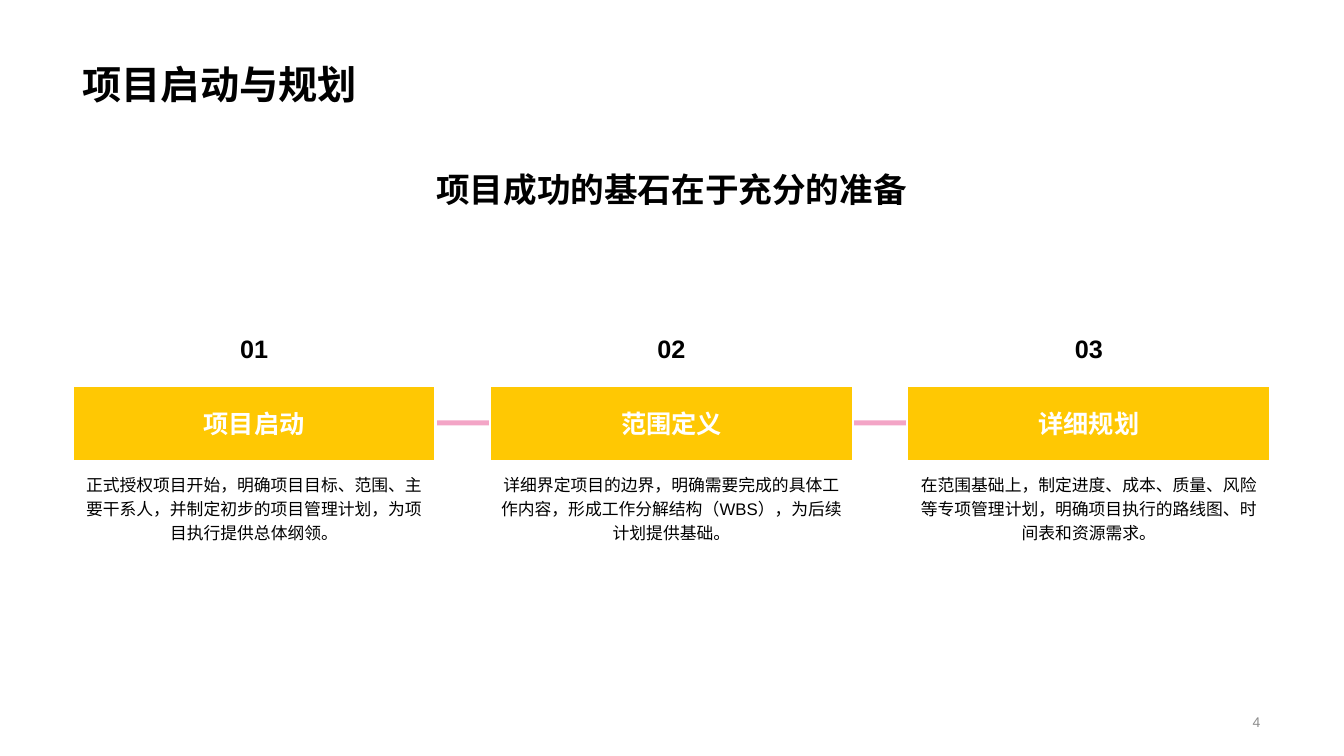
from pptx import Presentation
from pptx.dml.color import RGBColor
from pptx.enum.shapes import MSO_SHAPE as Shape
from pptx.enum.text import MSO_ANCHOR as Anchor, MSO_AUTO_SIZE as AutoSize, PP_ALIGN as Align
from pptx.oxml import parse_xml
from pptx.oxml.ns import nsdecls
from pptx.util import Inches, Pt

LEFT, WIDTH = 0.72, 11.88
STEP_WIDTH = 3.6
PITCH = (WIDTH - STEP_WIDTH) / 2
BAND_TOP, BAND_HEIGHT = 3.83, 0.74

STEPS = [
    ("项目启动", "正式授权项目开始，明确项目目标、范围、主要干系人，并制定初步的项目管理计划，为项目执行提供总体纲领。"),
    ("范围定义", "详细界定项目的边界，明确需要完成的具体工作内容，形成工作分解结构（WBS），为后续计划提供基础。"),
    ("详细规划", "在范围基础上，制定进度、成本、质量、风险等专项管理计划，明确项目执行的路线图、时间表和资源需求。"),
]


def color(value):
    return RGBColor.from_string(value)


def write(box, text, size, hue="000000", bold=False, align=Align.CENTER,
          anchor=Anchor.MIDDLE, spacing=1.0):
    frame = box.text_frame
    frame.text = text
    frame.word_wrap = True
    frame.auto_size = AutoSize.NONE
    frame.vertical_anchor = anchor
    para = frame.paragraphs[0]
    para.alignment = align
    para.line_spacing = spacing
    span = para.runs[0]
    font = span.font
    font.name, font.size, font.bold = "Arial", Pt(size), bold
    font.color.rgb = color(hue)
    # Chinese glyphs take the East Asian typeface
    font._element.find("{*}latin").addnext(
        parse_xml(f'<a:ea {nsdecls("a")} typeface="Noto Sans CJK SC"/>'))


deck = Presentation()
deck.slide_width, deck.slide_height = Inches(13.33), Inches(7.5)
page = deck.slides.add_slide(deck.slide_layouts[5])
shapes = page.shapes

# Title
title = shapes.title
title.left, title.top = Inches(LEFT), Inches(0.14)
title.width, title.height = Inches(WIDTH), Inches(0.98)
write(title, "项目启动与规划", 28, bold=True, align=Align.LEFT, anchor=Anchor.BOTTOM)

# Headline
headline = shapes.add_textbox(Inches(LEFT), Inches(1.63), Inches(WIDTH), Inches(1.09))
write(headline, "项目成功的基石在于充分的准备", 24, bold=True, anchor=Anchor.TOP)

# Translucent bar running behind the three steps
bar = shapes.add_shape(Shape.RECTANGLE, Inches(1), Inches(4.17), Inches(11.33), Inches(0.05))
bar.shadow.inherit = False
bar.line.fill.background()
bar.fill.solid()
bar.fill.fore_color.rgb = color("E84C8F")
bar.fill._xPr.find("{*}solidFill")[0].append(
    parse_xml(f'<a:alpha {nsdecls("a")} val="50000"/>'))

# Steps: number, band and description in each column
for index, (name, description) in enumerate(STEPS):
    left, width = Inches(LEFT + index * PITCH), Inches(STEP_WIDTH)

    band = shapes.add_shape(Shape.RECTANGLE, left, Inches(BAND_TOP), width, Inches(BAND_HEIGHT))
    band.shadow.inherit = False
    band.fill.solid()
    band.fill.fore_color.rgb = color("FFC803")
    band.line.color.rgb = color("FFFFFF")
    band.line.width = Pt(1.5)
    write(band, name, 18, "FFFFFF", bold=True)

    number = shapes.add_textbox(left, Inches(3.2), width, Inches(0.52))
    write(number, f"{index + 1:02d}", 18, bold=True)

    detail = shapes.add_textbox(left, Inches(4.62), width, Inches(1.8))
    write(detail, description, 12, anchor=Anchor.TOP, spacing=1.2)

# Page number
page_number = shapes.add_textbox(Inches(8.6), Inches(7.01), Inches(4), Inches(0.3))
write(page_number, "4", 10, "8C8C8C", align=Align.RIGHT)

deck.save("out.pptx")
